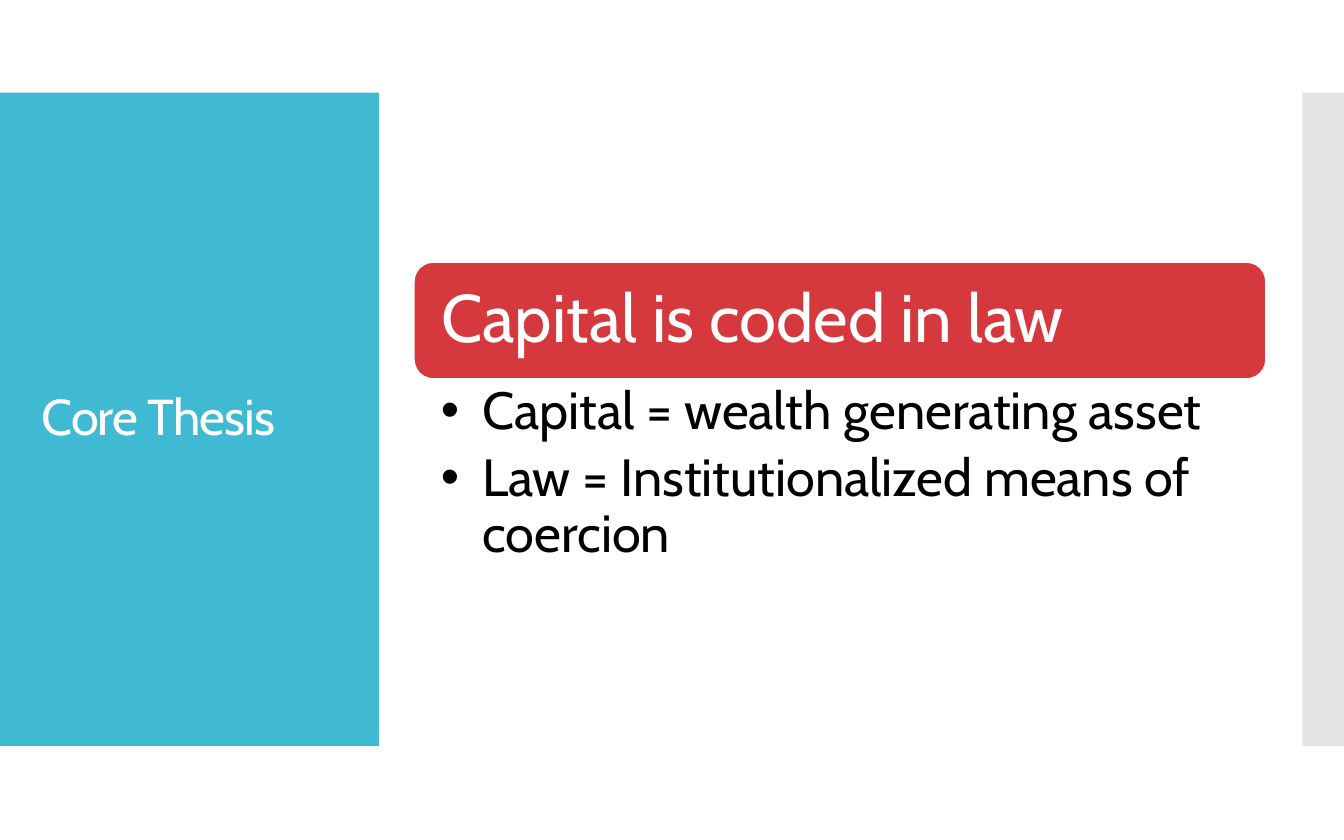
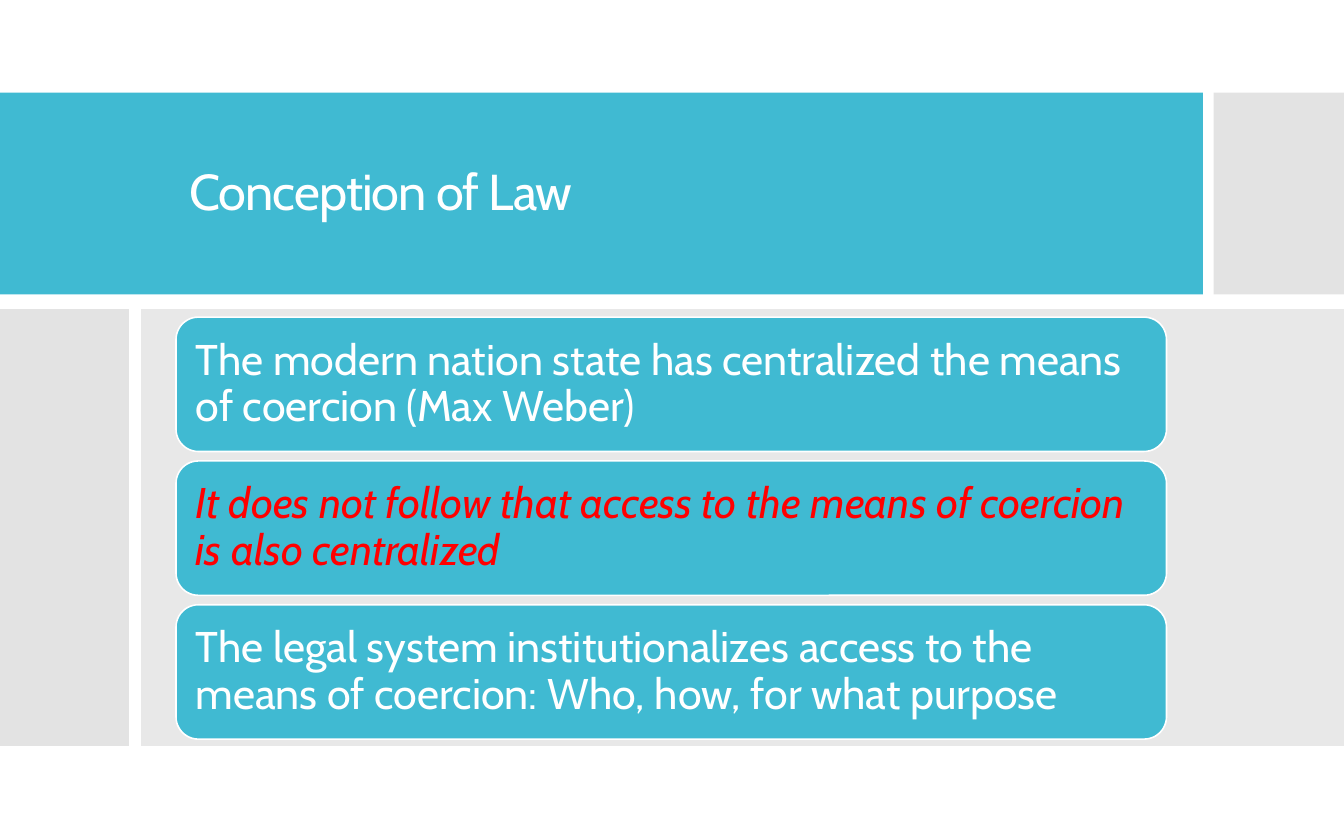
import dataclasses
import pptx
import pptx.util
import pptx.dml.color
import pptx.enum.shapes
import pptx.enum.text
import pptx.oxml
import pptx.oxml.ns

Inches, Pt = pptx.util.Inches, pptx.util.Pt
RGB = pptx.dml.color.RGBColor.from_string
Shape = pptx.enum.shapes.MSO_SHAPE
Anchor = pptx.enum.text.MSO_ANCHOR


@dataclasses.dataclass(frozen=True)
class Theme:
    font: str = "Cabin"
    teal: str = "40BAD2"
    red: str = "D5393D"
    alert: str = "FF0000"
    gray: str = "C8C8C8"
    pale: str = "D9D9D9"
    white: str = "FFFFFF"
    black: str = "000000"
    title: int = 27
    lead: int = 36
    list: int = 28
    card: int = 23


theme = Theme()


def write(shape, *lines, size, color=theme.white, italic=False, track=0,
          inset=(0.1, 0.05, 0.1, 0.05), anchor=Anchor.MIDDLE, after=0, hang=0):
    """Fill a shape with one paragraph a line; inset is left, top, right, bottom."""
    frame = shape.text_frame
    frame.word_wrap = True
    frame.auto_size = pptx.enum.text.MSO_AUTO_SIZE.NONE
    frame.vertical_anchor = anchor
    (frame.margin_left, frame.margin_top,
     frame.margin_right, frame.margin_bottom) = map(Inches, inset)
    frame.text = "\n".join(lines)
    for para in frame.paragraphs:
        para.alignment = pptx.enum.text.PP_ALIGN.LEFT
        para.line_spacing = 0.9
        para.space_before, para.space_after = Pt(0), Pt(after)
        if hang:
            props = para._p.get_or_add_pPr()
            props.set("marL", str(Inches(hang)))
            props.set("indent", str(-Inches(hang)))
        run = para.runs[0]
        run.font.name, run.font.size = theme.font, Pt(size)
        run.font.color.rgb = RGB(color)
        run.font.italic = italic
        if track:
            run._r.get_or_add_rPr().set("spc", str(int(track * 100)))


def block(slide, kind, area, fill, alpha=100, line=None):
    shape = slide.shapes.add_shape(kind, *map(Inches, area))
    shape.shadow.inherit = False
    shape.fill.solid()
    shape.fill.fore_color.rgb = RGB(fill)
    if alpha < 100:
        tint = shape.element.spPr.find(".//" + pptx.oxml.ns.qn("a:srgbClr"))
        space = pptx.oxml.ns.nsdecls("a")
        tint.append(pptx.oxml.parse_xml(f'<a:alpha {space} val="{alpha * 1000}"/>'))
    if line:
        shape.line.color.rgb = RGB(line)
        shape.line.width = Pt(0.85)
    else:
        shape.line.fill.background()
    return shape


deck = pptx.Presentation()
deck.slide_width, deck.slide_height = Inches(10), Inches(6.25)

top, foot = 0.69, 5.55
tall = foot - top
row = 2.3
low = foot - row

# Each page: layout index, title, title area, bands (area, fill, alpha)
pages = [
    (1, "Core Thesis", (0.21, 1.02, 2.42, 4.19), [
        ((0, top, 2.82, tall), theme.teal, 100),
        ((9.69, top, 0.31, tall), theme.gray, 50),
    ]),
    (5, "Conception of Law", (1.31, 0.99, 7.37, 0.91), [
        ((0, top, 8.95, 1.5), theme.teal, 100),
        ((9.03, top, 0.97, 1.5), theme.gray, 50),
        ((0, row, 0.96, low), theme.gray, 50),
        ((1.05, row, 8.95, low), theme.pale, 60),
    ]),
]

for index, text, area, bands in pages:
    slide = deck.slides.add_slide(deck.slide_layouts[index])
    title = slide.shapes.title
    title.left, title.top, title.width, title.height = map(Inches, area)
    write(title, text, size=theme.title, track=-0.5)
    for place, fill, alpha in bands:
        band = block(slide, Shape.RECTANGLE, place, fill, alpha)
        title.element.addprevious(band.element)

thesis, concept = deck.slides

# Core thesis: a headline card over its list
lead = block(thesis, Shape.ROUNDED_RECTANGLE, (3.08, 1.95, 6.34, 0.87),
             theme.red, line=theme.white)
write(lead, "Capital is coded in law", size=theme.lead, inset=(0.16, 0.1, 0.16, 0.1))

body = thesis.placeholders[1]
body.left, body.top, body.width, body.height = map(Inches, (3.08, 2.82, 6.34, 1.49))
write(body, "Capital = wealth generating asset",
      "Law = Institutionalized means of coercion",
      size=theme.list, color=theme.black, inset=(0.2, 0.04, 0.22, 0.04),
      anchor=Anchor.TOP, after=5.6, hang=0.31)

# Conception of law: three stacked cards
claims = [
    ("The modern nation state has centralized the means of coercion (Max Weber)", False),
    ("It does not follow that access to the means of coercion is also centralized", True),
    ("The legal system institutionalizes access to the means of coercion: "
     "Who, how, for what purpose", False),
]
for step, (claim, stress) in enumerate(claims):
    card = block(concept, Shape.ROUNDED_RECTANGLE, (1.31, 2.36 + 1.07 * step, 7.37, 1),
                 theme.teal, line=theme.white)
    write(card, claim, size=theme.card, italic=stress,
          color=theme.alert if stress else theme.white, inset=(0.1, 0.1, 0.1, 0.1))

deck.save("out.pptx")
